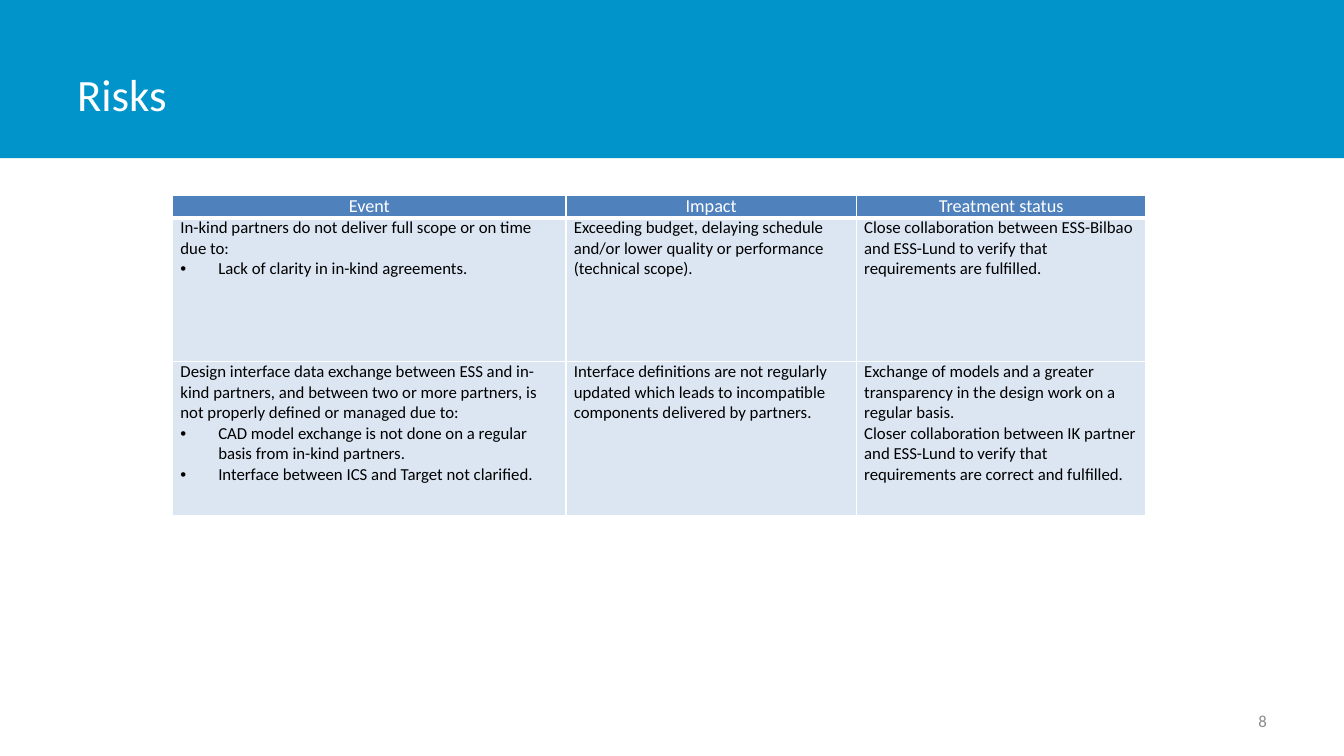
from lxml import etree
from pptx import Presentation
from pptx.dml.color import RGBColor
from pptx.enum.shapes import MSO_SHAPE
from pptx.enum.text import MSO_ANCHOR, PP_ALIGN
from pptx.oxml.ns import qn
from pptx.util import Pt

RECT = MSO_SHAPE.RECTANGLE
TOP, MIDDLE = MSO_ANCHOR.TOP, MSO_ANCHOR.MIDDLE
LEFT, CENTER, RIGHT = PP_ALIGN.LEFT, PP_ALIGN.CENTER, PP_ALIGN.RIGHT

BULLET = "• "
HEADER = ["Event", "Impact", "Treatment status"]
RISKS = [
    [
        ["In-kind partners do not deliver full scope or on time due to:",
         "• Lack of clarity in in-kind agreements."],
        ["Exceeding budget, delaying schedule and/or lower quality or "
         "performance (technical scope)."],
        ["Close collaboration between ESS-Bilbao and ESS-Lund to verify that "
         "requirements are fulfilled."],
    ],
    [
        ["Design interface data exchange between ESS and in-kind partners, and "
         "between two or more partners, is not properly defined or managed due to:",
         "• CAD model exchange is not done on a regular basis from in-kind partners.",
         "• Interface between ICS and Target not clarified."],
        ["Interface definitions are not regularly updated which leads to "
         "incompatible components delivered by partners."],
        ["Exchange of models and a greater transparency in the design work on a "
         "regular basis.",
         "Closer collaboration between IK partner and ESS-Lund to verify that "
         "requirements are correct and fulfilled."],
    ],
]


def rgb(value):
    return RGBColor.from_string(value)


def write(p, text, size=12, color="000000", align=LEFT, font="Calibri"):
    """Fill a paragraph; a leading bullet mark becomes a real bullet."""
    if text.startswith(BULLET):
        text = text.removeprefix(BULLET)
        pPr = p._p.get_or_add_pPr()
        pPr.set("marL", str(Pt(27)))
        pPr.set("indent", str(-Pt(27)))
        etree.SubElement(pPr, qn("a:buFont"), typeface="Arial")
        etree.SubElement(pPr, qn("a:buChar"), char=BULLET.strip())
    p.alignment = align
    r = p.add_run()
    r.text = text
    r.font.name, r.font.size = font, Pt(size)
    r.font.color.rgb = rgb(color)


class Slide:
    """The current slide and its style."""
    band, head, body, rule = "0094CA", "4F81BD", "DCE6F2", "FFFFFF"

    def __init__(self, prs):
        self.s = prs.slides.add_slide(prs.slide_layouts[6])

    def rect(self, x, y, w, h, fill):
        sp = self.s.shapes.add_shape(RECT, Pt(x), Pt(y), Pt(w), Pt(h))
        sp.shadow.inherit = False
        sp.fill.solid()
        sp.fill.fore_color.rgb = rgb(fill)
        sp.line.fill.background()

    def text(self, x, y, w, h, text, **fmt):
        tf = self.s.shapes.add_textbox(Pt(x), Pt(y), Pt(w), Pt(h)).text_frame
        tf.word_wrap = True
        tf.vertical_anchor = MIDDLE
        write(tf.paragraphs[0], text, **fmt)

    def cell(self, cell, lines, fill, anchor=TOP, bottom=1, **fmt):
        cell.margin_left = cell.margin_right = Pt(5.6)
        cell.margin_top = cell.margin_bottom = 0
        cell.vertical_anchor = anchor
        # Borders come before the fill in the cell properties
        tcPr = cell._tc.get_or_add_tcPr()
        for side, width in (("L", 1), ("R", 1), ("T", 1), ("B", bottom)):
            ln = etree.SubElement(tcPr, qn(f"a:ln{side}"), w=str(Pt(width)))
            solid = etree.SubElement(ln, qn("a:solidFill"))
            etree.SubElement(solid, qn("a:srgbClr"), val=self.rule)
        cell.fill.solid()
        cell.fill.fore_color.rgb = rgb(fill)
        tf = cell.text_frame
        for i, line in enumerate(lines):
            write(tf.add_paragraph() if i else tf.paragraphs[0], line, **fmt)

    def table(self, x, y, widths, heights, header, rows):
        table = self.s.shapes.add_table(
            len(heights), len(widths), Pt(x), Pt(y),
            Pt(sum(widths)), Pt(sum(heights))).table
        for column, width in zip(table.columns, widths):
            column.width = Pt(width)
        for row, height in zip(table.rows, heights):
            row.height = Pt(height)
        for c, label in enumerate(header):
            self.cell(table.cell(0, c), [label], self.head, MIDDLE, bottom=3,
                      size=13, color="FFFFFF", align=CENTER)
        for r, row in enumerate(rows, 1):
            for c, lines in enumerate(row):
                self.cell(table.cell(r, c), lines, self.body)


def main():
    prs = Presentation()
    prs.slide_width, prs.slide_height = Pt(960), Pt(540)
    slide = Slide(prs)

    # Title band
    slide.rect(0, 0, 960, 113, slide.band)
    slide.text(48, 21.6, 749.5, 90, "Risks", size=32, color="FFFFFF")

    # Risk table
    slide.table(123.3, 139.5, [281, 207.4, 206.8], [16, 103, 110], HEADER, RISKS)

    # Slide number
    slide.text(688, 500.5, 224, 28.8, "8", color="8C8C8C", align=RIGHT)

    prs.save("out.pptx")


if __name__ == "__main__":
    main()
